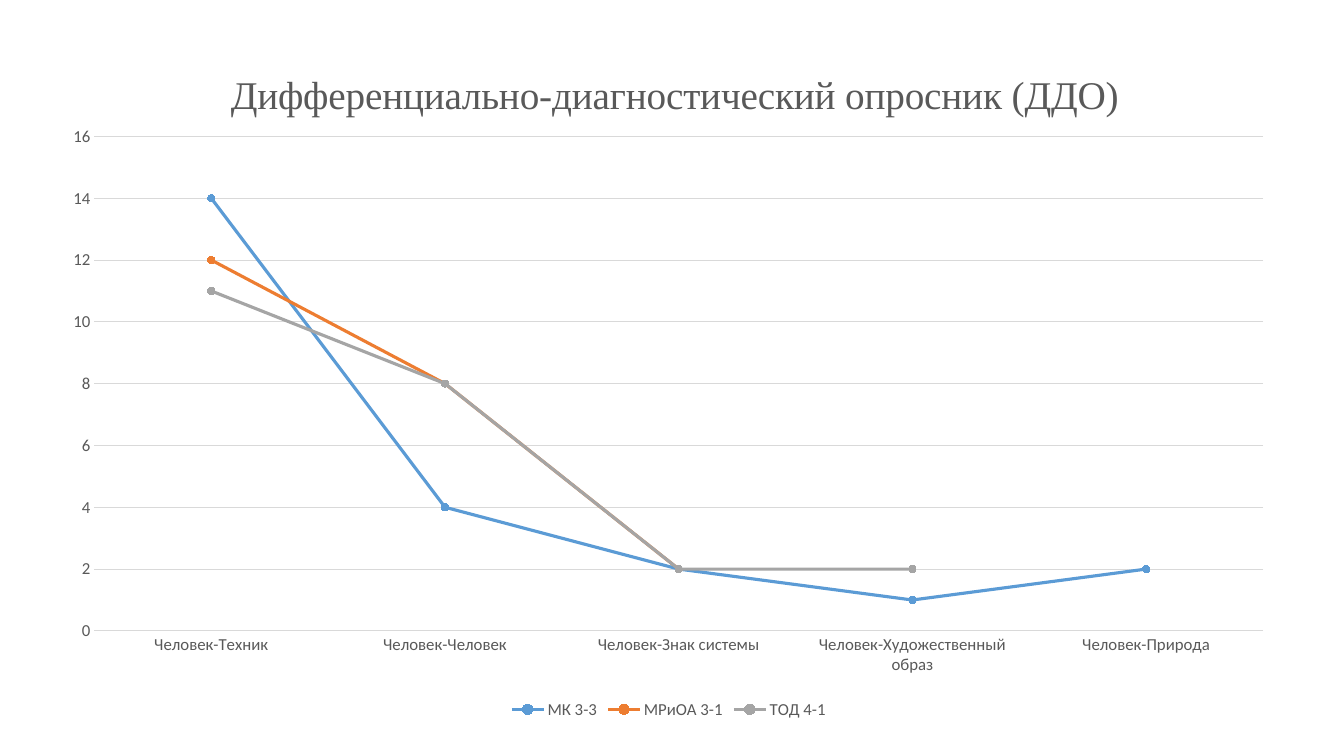
"""Build a slide with a line chart of career questionnaire results."""
from lxml import etree
from pptx import Presentation
from pptx.chart.data import CategoryChartData
from pptx.dml.color import RGBColor
from pptx.enum.chart import XL_CHART_TYPE, XL_LEGEND_POSITION, XL_MARKER_STYLE, XL_TICK_MARK
from pptx.oxml.ns import qn
from pptx.util import Emu, Pt

LINE_MARKERS = XL_CHART_TYPE.LINE_MARKERS
LEGEND_BOTTOM = XL_LEGEND_POSITION.BOTTOM
CIRCLE = XL_MARKER_STYLE.CIRCLE
NO_TICK = XL_TICK_MARK.NONE

TEXT_GREY = RGBColor(0x59, 0x59, 0x59)
GRID_GREY = RGBColor(0xD9, 0xD9, 0xD9)
BLUE = RGBColor(0x5B, 0x9B, 0xD5)
ORANGE = RGBColor(0xED, 0x7D, 0x31)
GREY = RGBColor(0xA5, 0xA5, 0xA5)

EMU_PER_PX = 9525
SLIDE_SIZE = (1280, 720)
CHART_BOX = (47, 38, 1180, 651)
PLOT_BOX = (90, 130, 1113, 471)
TITLE_CORNER = (213, 60)

TITLE = "Дифференциально-диагностический опросник (ДДО)"
CATEGORIES = [
    "Человек-Техник",
    "Человек-Человек",
    "Человек-Знак системы",
    "Человек-Художественный образ",
    "Человек-Природа",
]
GROUPS = [
    ("МК 3-3", (14, 4, 2, 1, 2), BLUE),
    ("МРиОА 3-1", (12, 8, 2, None, None), ORANGE),
    ("ТОД 4-1", (11, 8, 2, 2, None), GREY),
]


def px(length):
    return Emu(length * EMU_PER_PX)


class SlideBuilder:
    """Holds the text style and the current slide."""

    def __init__(self, page):
        self.page = page
        self.body_font = "Calibri"
        self.title_font = "Times New Roman"

    def style_font(self, font, name, size):
        font.name = name
        font.size = Pt(size)
        font.bold = False
        font.color.rgb = TEXT_GREY

    def style_line(self, line, color, width):
        line.color.rgb = color
        line.width = Pt(width)

    def place(self, parent, index, box, target=None):
        for old in parent.findall(qn("c:layout")):
            parent.remove(old)
        layout = etree.Element(qn("c:layout"))
        parent.insert(index, layout)
        manual = etree.SubElement(layout, qn("c:manualLayout"))
        left, top, width, height = CHART_BOX
        fractions = [
            (box[0] - left) / width,
            (box[1] - top) / height,
            *(size / full for size, full in zip(box[2:], (width, height))),
        ]
        settings = [("layoutTarget", target)] if target else []
        settings += [("xMode", "edge"), ("yMode", "edge")]
        settings += zip("xywh", (f"{value:.4f}" for value in fractions))
        for tag, value in settings:
            etree.SubElement(manual, qn(f"c:{tag}")).set("val", value)

    def add_title(self, chart, text):
        title = chart.chart_title
        title.text_frame.text = text
        span = title.text_frame.paragraphs[0].runs[0]
        self.style_font(span.font, self.title_font, 28)
        self.place(title.element if hasattr(title, "element") else chart.element.find(".//" + qn("c:title")),
                   1, TITLE_CORNER)

    def style_axes(self, chart):
        for axis in (chart.category_axis, chart.value_axis):
            axis.major_tick_mark = axis.minor_tick_mark = NO_TICK
            self.style_font(axis.tick_labels.font, self.body_font, 12)
        self.style_line(chart.category_axis.format.line, GRID_GREY, 0.75)
        scale = chart.value_axis
        scale.minimum_scale, scale.maximum_scale, scale.major_unit = 0, 16, 2
        scale.format.line.fill.background()
        scale.has_major_gridlines = True
        self.style_line(scale.major_gridlines.format.line, GRID_GREY, 0.75)

    def style_series(self, series, color):
        series.smooth = False
        self.style_line(series.format.line, color, 2.25)
        marker = series.marker
        marker.style = CIRCLE
        marker.size = 5
        marker.format.fill.solid()
        marker.format.fill.fore_color.rgb = color
        self.style_line(marker.format.line, color, 0.75)

    def add_line_chart(self, title, categories, groups):
        data = CategoryChartData()
        data.categories = categories
        for name, values, _ in groups:
            data.add_series(name, values)
        chart = self.page.shapes.add_chart(LINE_MARKERS, *map(px, CHART_BOX), data).chart
        self.style_font(chart.font, self.body_font, 12)
        chart.has_title = True
        self.add_title(chart, title)
        self.style_axes(chart)
        chart.plots[0].vary_by_categories = False
        for series, (_, _, color) in zip(chart.plots[0].series, groups):
            self.style_series(series, color)
        chart.has_legend = True
        chart.legend.position = LEGEND_BOTTOM
        chart.legend.include_in_layout = False
        self.style_font(chart.legend.font, self.body_font, 12)
        self.place(chart.element.find(".//" + qn("c:plotArea")), 0, PLOT_BOX, "inner")


def main():
    deck = Presentation()
    deck.slide_width, deck.slide_height = map(px, SLIDE_SIZE)
    page = deck.slides.add_slide(deck.slide_layouts.get_by_name("Blank"))
    SlideBuilder(page).add_line_chart(TITLE, CATEGORIES, GROUPS)
    deck.save("out.pptx")


if __name__ == "__main__":
    main()
